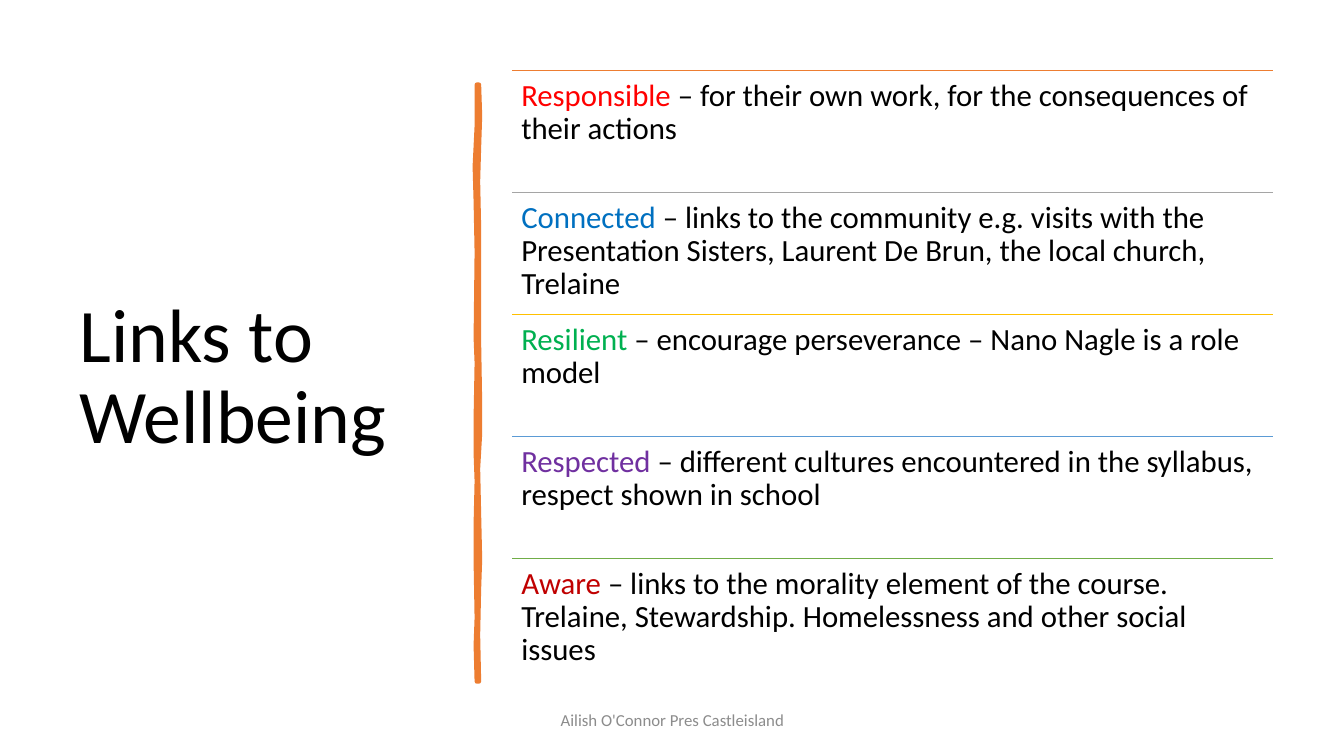
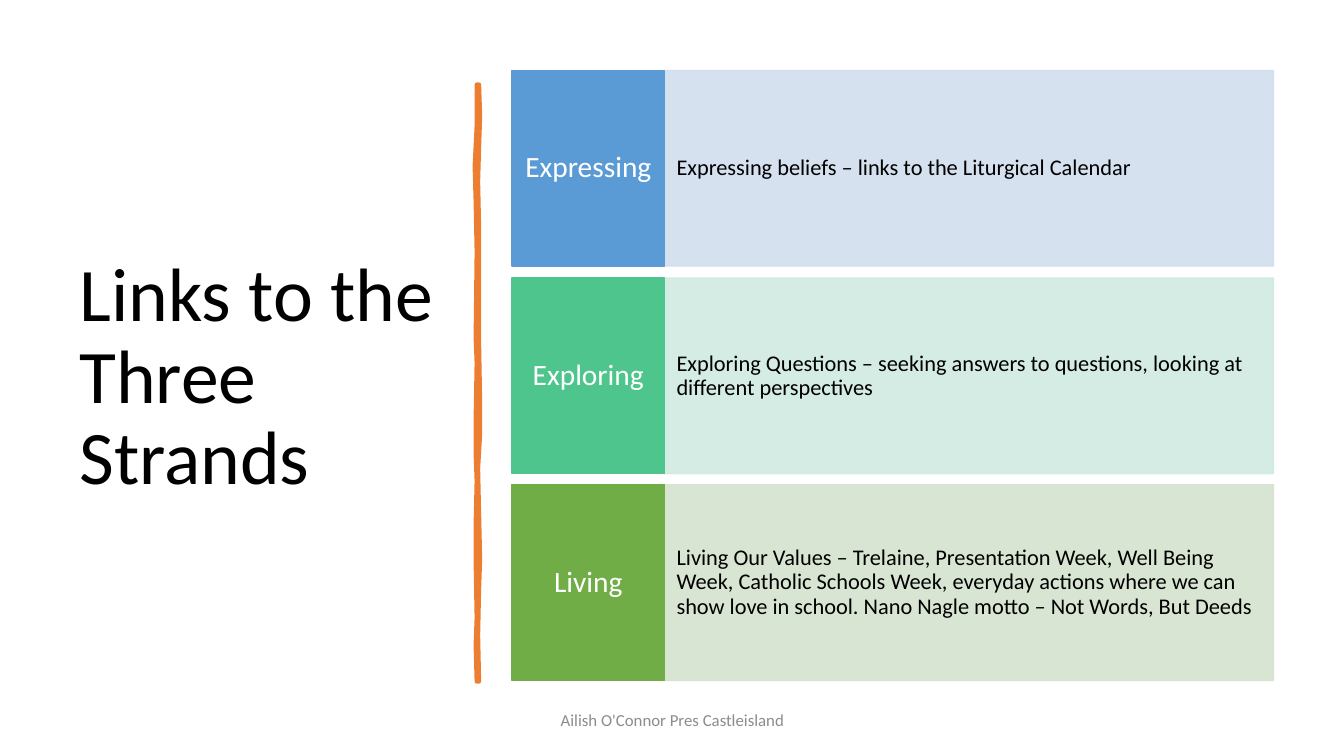
"""Build two slides that link a school course to wellbeing and to its three strands."""
import dataclasses

import pptx
import pptx.dml.color
import pptx.enum.shapes
import pptx.enum.text
import pptx.oxml
import pptx.oxml.ns
import pptx.util

ALIGN = pptx.enum.text.PP_ALIGN
ANCHOR = pptx.enum.text.MSO_ANCHOR


@dataclasses.dataclass(frozen=True)
class Theme:
    """Hold the colours, type sizes and font that the slides share."""
    font: str = "Calibri"
    black: str = "000000"
    white: str = "FFFFFF"
    grey: str = "8C8C8C"
    accent: str = "ED7D31"
    title: int = 54
    point: int = 22
    label: int = 21
    detail: int = 16
    foot: int = 12


THEME = Theme()
LEFT, TOP, WIDTH, BOTTOM = 508, 70, 755, 675
LABEL = 151
FOOTER = "Ailish O'Connor Pres Castleisland"

BRUSH = [
    (475, 84), (476, 115), (475, 146), (474, 180), (475, 226), (475, 294),
    (475, 340), (476, 400), (476, 430), (474, 465), (475, 510), (476, 555),
    (475, 584), (474, 630), (475, 676), (473, 676), (472, 640), (473, 613),
    (472, 557), (472, 520), (473, 477), (472, 450), (472, 415), (473, 360),
    (472, 335), (473, 250), (472, 200), (471, 165), (473, 125), (473, 84),
]

POINTS = [
    ("Responsible ", "– for their own work, for the consequences of their actions",
     "FF0000", "ED7D31"),
    ("Connected", " – links to the community e.g. visits with the Presentation Sisters, "
     "Laurent De Brun, the local church, Trelaine", "0070C0", "A5A5A5"),
    ("Resilient", " – encourage perseverance – Nano Nagle is a role model",
     "00B050", "FFC000"),
    ("Respected ", "– different cultures encountered in the syllabus, "
     "respect shown in school", "7030A0", "5B9BD5"),
    ("Aware ", "– links to the morality element of the course. Trelaine, Stewardship. "
     "Homelessness and other social issues", "C00000", "70AD47"),
]

STRANDS = [
    ("Expressing", "Expressing beliefs – links to the Liturgical Calendar",
     "5B9BD5", "D2DEEF"),
    ("Exploring", "Exploring Questions – seeking answers to questions, "
     "looking at different perspectives", "4DC58D", "D0EAE1"),
    ("Living", "Living Our Values – Trelaine, Presentation Week, Well Being Week, "
     "Catholic Schools Week, everyday actions where we can show love in school. "
     "Nano Nagle motto – Not Words, But Deeds", "70AD47", "D5E3CF"),
]


def px(size):
    """Turn a length in px, 100 to the inch, into EMU."""
    return pptx.util.Emu(size * 9144)


def tint(code):
    """Turn a hex code into a colour."""
    return pptx.dml.color.RGBColor.from_string(code)


def write(shape, runs, size, align=ALIGN.LEFT, anchor=ANCHOR.MIDDLE, inset=(10, 5)):
    """Fill a shape with one paragraph made of (text, colour) runs."""
    frame = shape.text_frame
    frame.word_wrap = True
    frame.vertical_anchor = anchor
    frame.margin_left = frame.margin_right = px(inset[0])
    frame.margin_top = frame.margin_bottom = px(inset[1])
    para = frame.paragraphs[0]
    para.alignment = align
    para.line_spacing = 0.9
    for text, code in runs:
        run = para.add_run()
        run.text = text
        run.font.name = THEME.font
        run.font.size = pptx.util.Pt(size)
        run.font.color.rgb = tint(code)


def label(slide, box, *words, **style):
    """Add a text box."""
    write(slide.shapes.add_textbox(*map(px, box)), *words, **style)


def paint(shape, code, width=1):
    """Give a shape one colour for its fill and line, and no shadow."""
    shape.shadow.inherit = False
    shape.fill.solid()
    shape.fill.fore_color.rgb = tint(code)
    shape.line.color.rgb = tint(code)
    shape.line.width = pptx.util.Pt(width)


def fade(shape, share):
    """Set the opacity of a shape's fill and line, in percent."""
    for color in shape._element.spPr.iter(pptx.oxml.ns.qn("a:srgbClr")):
        alpha = pptx.oxml.parse_xml(f'<a:alpha {pptx.oxml.ns.nsdecls("a")}/>')
        alpha.set("val", str(share * 1000))
        color.append(alpha)


def panel(slide, box, code):
    """Add a plain coloured rectangle."""
    kind = pptx.enum.shapes.MSO_SHAPE.RECTANGLE
    shape = slide.shapes.add_shape(kind, *map(px, box))
    paint(shape, code)
    return shape


def rule(slide, top, code):
    """Add a thin line across the content column."""
    kind = pptx.enum.shapes.MSO_CONNECTOR.STRAIGHT
    ends = map(px, (LEFT, top, LEFT + WIDTH, top))
    line = slide.shapes.add_connector(kind, *ends)
    line.line.color.rgb = tint(code)
    line.line.width = pptx.util.Pt(1)
    props = line._element.spPr
    props.append(pptx.oxml.parse_xml(f'<a:effectLst {pptx.oxml.ns.nsdecls("a")}/>'))


def brush(slide):
    """Draw the uneven upright stroke beside the title."""
    pen = slide.shapes.build_freeform(*BRUSH[0], scale=px(1))
    pen.add_line_segments(BRUSH[1:], close=True)
    shape = pen.convert_to_shape()
    paint(shape, THEME.accent, 3.25)
    line = shape.line._get_or_add_ln()
    line.append(pptx.oxml.parse_xml(f'<a:round {pptx.oxml.ns.nsdecls("a")}/>'))


def start(deck, title):
    """Add a slide with its title, brush stroke and footer."""
    slide = deck.slides.add_slide(deck.slide_layouts[6])
    label(slide, (69, 70, 374, 611), [(title, THEME.black)], THEME.title)
    brush(slide)
    label(slide, (442, 695, 450, 40), [(FOOTER, THEME.grey)], THEME.foot,
          align=ALIGN.CENTER)
    return slide


def points(slide):
    """List the wellbeing points in ruled rows of equal height."""
    step = (BOTTOM - TOP) // len(POINTS)
    for row, (key, text, code, line) in enumerate(POINTS):
        top = TOP + row * step
        rule(slide, top, line)
        label(slide, (LEFT, top, WIDTH, step), [(key, code), (text, THEME.black)],
              THEME.point, anchor=ANCHOR.TOP, inset=(9, 9))


def strands(slide):
    """Stack the strands, each a label beside a pale panel."""
    high = 194
    step = (BOTTOM - TOP - high) / (len(STRANDS) - 1)
    for row, (key, text, dark, pale) in enumerate(STRANDS):
        top = TOP + round(row * step)
        body = panel(slide, (LEFT + LABEL, top, WIDTH - LABEL, high), pale)
        fade(body, 90)
        write(body, [(text, THEME.black)], THEME.detail, inset=(12, 49))
        head = panel(slide, (LEFT, top, LABEL, high), dark)
        write(head, [(key, THEME.white)], THEME.label, ALIGN.CENTER, inset=(8, 19))


def main():
    """Build and save the deck."""
    deck = pptx.Presentation()
    deck.slide_width, deck.slide_height = px(1333), px(750)
    points(start(deck, "Links to Wellbeing"))
    strands(start(deck, "Links to the Three Strands"))
    deck.save("out.pptx")


if __name__ == "__main__":
    main()
